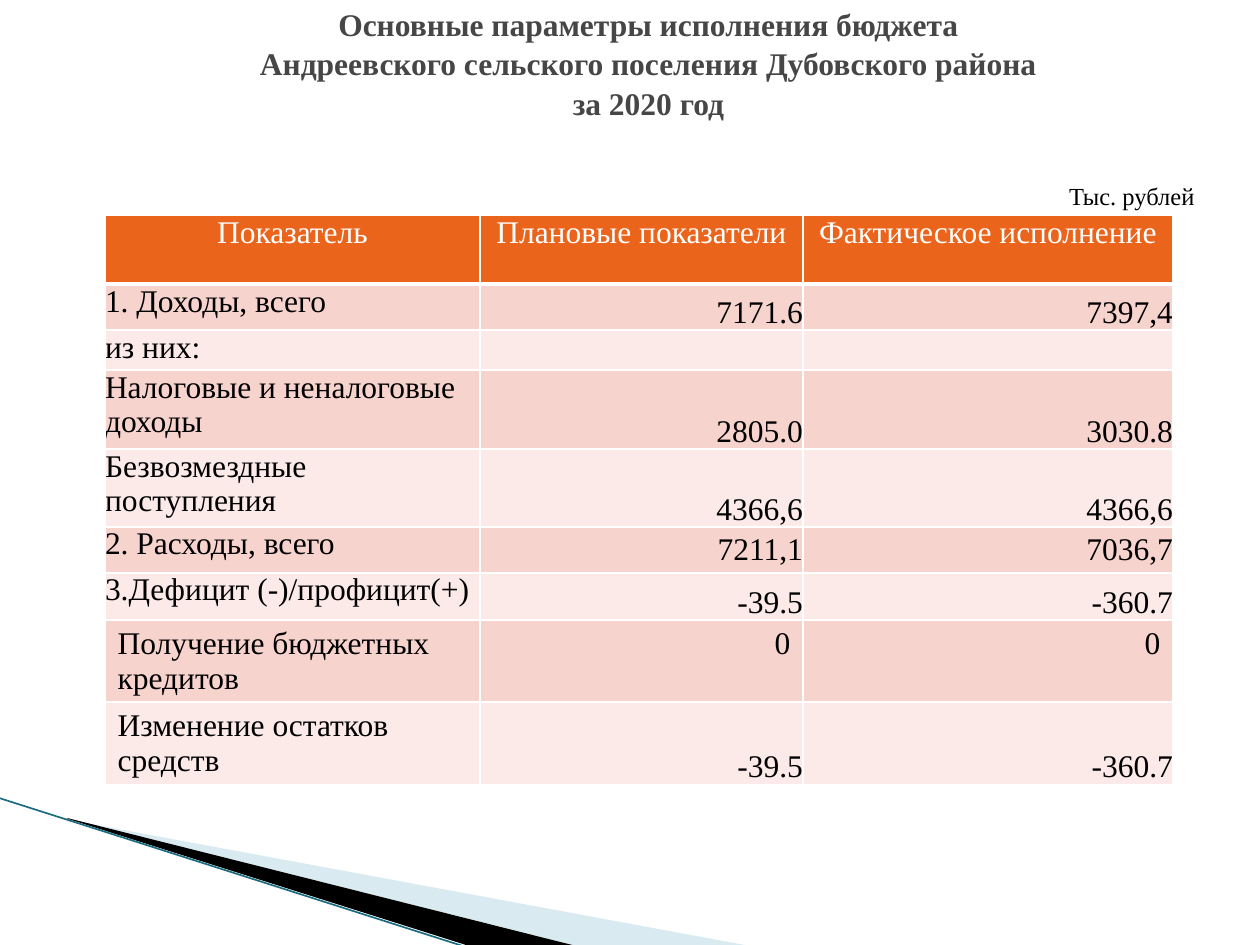
from lxml.etree import SubElement
from pptx import Presentation
from pptx.dml.color import RGBColor
from pptx.enum.shapes import MSO_CONNECTOR
from pptx.enum.text import MSO_ANCHOR, PP_ALIGN
from pptx.oxml import parse_xml
from pptx.oxml.ns import nsdecls, qn
from pptx.util import Emu, Pt

PX = 914400 / 126
FONT = "Times New Roman"

WHITE = RGBColor(0xFF, 0xFF, 0xFF)
BLACK = RGBColor(0x00, 0x00, 0x00)
TITLE_GREY = RGBColor(0x46, 0x46, 0x46)
HEADER_ORANGE = RGBColor(0xEB, 0x64, 0x1B)
BAND_DARK = RGBColor(0xF7, 0xD3, 0xCD)
BAND_LIGHT = RGBColor(0xFB, 0xEA, 0xE8)
PALE_BLUE = RGBColor(0xA0, 0xCB, 0xDC)
EDGE_TEAL = RGBColor(0x1B, 0x6C, 0x80)

# Content
TITLE = [
    "Основные параметры исполнения бюджета",
    "Андреевского сельского поселения Дубовского района",
    "за 2020 год",
]
UNITS = "Тыс. рублей"
HEADER = ["Показатель", "Плановые показатели", "Фактическое исполнение"]
BUDGET = [
    ["1. Доходы, всего", "7171.6", "7397,4"],
    ["из них:", "", ""],
    ["Налоговые и неналоговые доходы", "2805.0", "3030.8"],
    ["Безвозмездные поступления", "4366,6", "4366,6"],
    ["2. Расходы, всего", "7211,1", "7036,7"],
    ["3.Дефицит (-)/профицит(+)", "-39.5", "-360.7"],
    ["Получение бюджетных кредитов", "0", "0"],
    ["Изменение остатков средств", "-39.5", "-360.7"],
]
COLUMN_WIDTHS = [375, 323, 370]
ROW_HEIGHTS = [69, 46, 40, 79, 78, 46, 47, 82, 82]
TABLE_LEFT, TABLE_TOP = 105, 215
EXPENSES_ROW, CREDITS_ROW, BALANCE_ROW = 5, 7, 8

# Corner decoration: outline, fill, opacity in percent
WEDGES = [
    ([(69, 820), (750, 946), (575, 946), (69, 819)], PALE_BLUE, 40),
    ([(67, 818), (576, 946), (469, 946), (68, 819)], BLACK, 100),
]
EDGE = (-1, 798, 469, 948)


def px(*lengths):
    return [Emu(round(length * PX)) for length in lengths]


def add_run(paragraph, text, size, color, bold=False):
    run = paragraph.add_run()
    run.text = text
    run.font.name = FONT
    run.font.size = Pt(size)
    run.font.bold = bold
    run.font.color.rgb = color


def add_text(slide, box, lines, align, size, color, bold=False, spacing=None):
    frame = slide.shapes.add_textbox(*px(*box)).text_frame
    frame.word_wrap = True
    frame.vertical_anchor = MSO_ANCHOR.MIDDLE
    for i, line in enumerate(lines):
        paragraph = frame.add_paragraph() if i else frame.paragraphs[0]
        paragraph.alignment = align
        paragraph.line_spacing = spacing
        add_run(paragraph, line, size, color, bold)


def set_borders(cell, bottom_width):
    properties = cell._tc.get_or_add_tcPr()
    for i, side in enumerate("LRTB"):
        width = Pt(bottom_width if side == "B" else 1)
        properties.insert(i, parse_xml(
            f'<a:ln{side} {nsdecls("a")} w="{width}"><a:solidFill>'
            f'<a:srgbClr val="{WHITE}"/></a:solidFill></a:ln{side}>'))


def fill_cell(cell, text, row, column):
    is_header = row == 0
    is_value = row > 0 and column > 0
    padded = row == CREDITS_ROW or (row == BALANCE_ROW and column == 0)
    if not padded:
        cell.margin_left = cell.margin_right = 0
        cell.margin_top = cell.margin_bottom = 0
    paragraph = cell.text_frame.paragraphs[0]
    if is_header:
        paragraph.alignment = PP_ALIGN.CENTER
    elif is_value:
        paragraph.alignment = PP_ALIGN.RIGHT
        if text and not padded:
            paragraph.line_spacing = 1.15
            if row != EXPENSES_ROW:
                cell.vertical_anchor = MSO_ANCHOR.BOTTOM
    if text:
        add_run(paragraph, text, 18, WHITE if is_header else BLACK)
    cell.fill.solid()
    band = BAND_DARK if row % 2 else BAND_LIGHT
    cell.fill.fore_color.rgb = HEADER_ORANGE if is_header else band
    set_borders(cell, 3 if is_header else 1)


def add_decoration(slide):
    for points, color, opacity in WEDGES:
        builder = slide.shapes.build_freeform(*points[0], scale=PX)
        builder.add_line_segments(points[1:], close=True)
        wedge = builder.convert_to_shape()
        wedge.shadow.inherit = False
        wedge.fill.solid()
        wedge.fill.fore_color.rgb = color
        wedge.line.fill.background()
        if opacity < 100:
            srgb = wedge._element.spPr.find(qn("a:solidFill"))[0]
            SubElement(srgb, qn("a:alpha"), val=str(opacity * 1000))
    edge = slide.shapes.add_connector(MSO_CONNECTOR.STRAIGHT, *px(*EDGE))
    edge.line.color.rgb = EDGE_TEAL
    edge.line.width = Pt(0.95)
    SubElement(edge._element.spPr, qn("a:effectLst"))


def add_budget_table(slide):
    rows = [HEADER] + BUDGET
    box = px(TABLE_LEFT, TABLE_TOP, sum(COLUMN_WIDTHS), sum(ROW_HEIGHTS))
    table = slide.shapes.add_table(len(rows), len(HEADER), *box).table
    for column, width in zip(table.columns, px(*COLUMN_WIDTHS)):
        column.width = width
    for row, height in zip(table.rows, px(*ROW_HEIGHTS)):
        row.height = height
    for r, texts in enumerate(rows):
        for c, text in enumerate(texts):
            fill_cell(table.cell(r, c), text, r, c)


def main():
    deck = Presentation()
    deck.slide_width, deck.slide_height = px(1260, 945)
    slide = deck.slides.add_slide(deck.slide_layouts[6])
    add_decoration(slide)
    add_budget_table(slide)
    add_text(slide, (94, 0, 1109, 125), TITLE, PP_ALIGN.CENTER, 18,
             TITLE_GREY, bold=True, spacing=1.05)
    add_text(slide, (930, 174, 277, 43), [UNITS], PP_ALIGN.RIGHT, 14, BLACK)
    deck.save("out.pptx")


if __name__ == "__main__":
    main()
